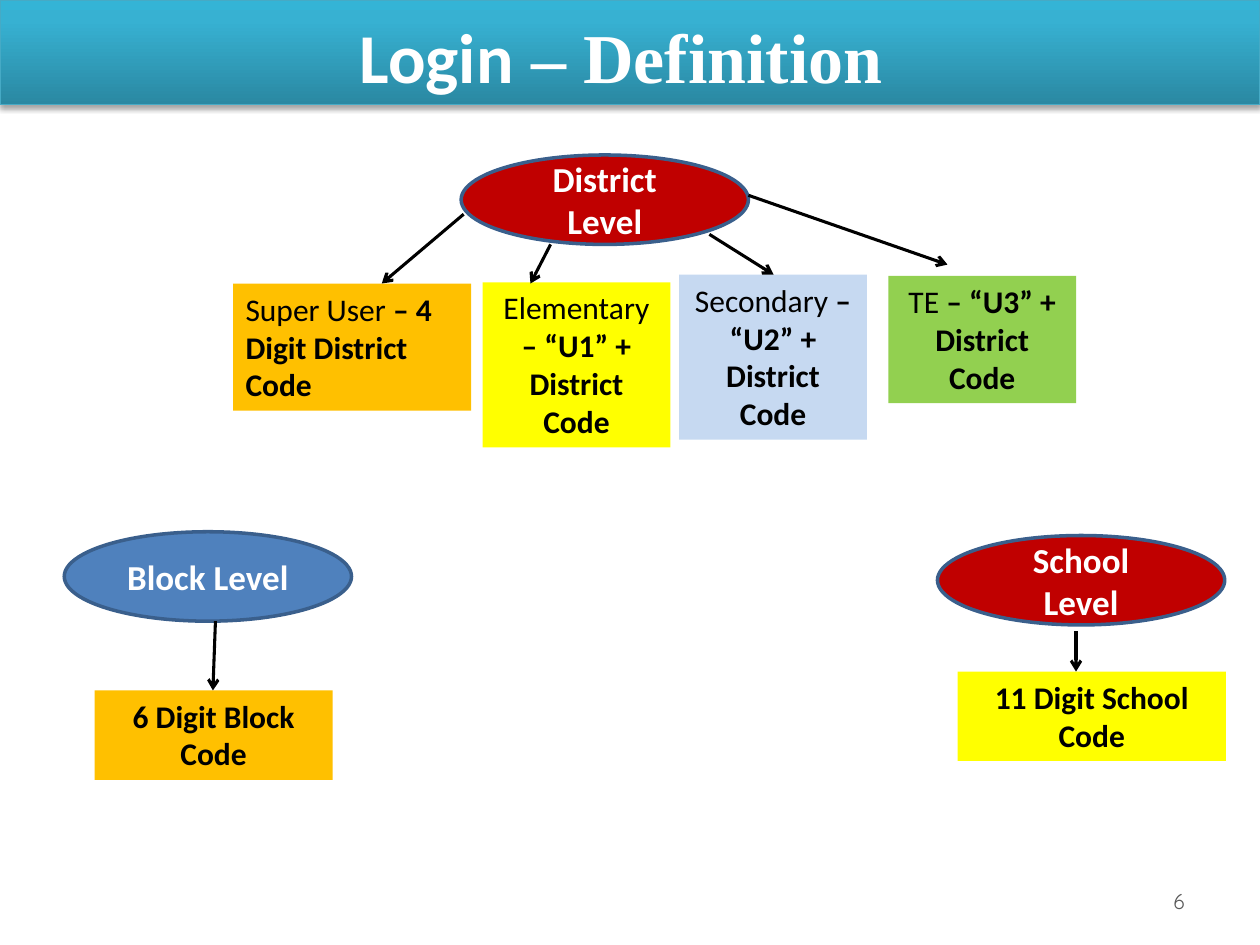
import lxml.etree
import pptx
import pptx.util
import pptx.dml.color
import pptx.enum.shapes
import pptx.enum.text
import pptx.oxml
import pptx.oxml.ns

RGB = pptx.dml.color.RGBColor
SHAPE = pptx.enum.shapes.MSO_SHAPE
ALIGN = pptx.enum.text.PP_ALIGN
ANCHOR = pptx.enum.text.MSO_ANCHOR
FIT = pptx.enum.text.MSO_AUTO_SIZE

WHITE = RGB(0xFF, 0xFF, 0xFF)
BLACK = RGB(0x00, 0x00, 0x00)
GREY = RGB(0x59, 0x59, 0x59)
RED = RGB(0xC0, 0x00, 0x00)
BLUE = RGB(0x4F, 0x81, 0xBD)
NAVY = RGB(0x3A, 0x5F, 0x8C)
ORANGE = RGB(0xFF, 0xC0, 0x00)
YELLOW = RGB(0xFF, 0xFF, 0x00)
PALE_BLUE = RGB(0xC6, 0xD9, 0xF1)
GREEN = RGB(0x92, 0xD0, 0x50)
TEAL_EDGE = RGB(0x46, 0xAA, 0xC5)
TEAL_STOPS = [(0, RGB(0x2A, 0x88, 0xA2)), (0.8, RGB(0x37, 0xB1, 0xD2)), (1, RGB(0x34, 0xB4, 0xD6))]


class LoginSlide:
    """Draws the login chart on a grid of 100 columns by 75 rows."""

    columns, rows = 100, 75
    level_size = (22.8, 7.1)
    heading = {"size": pptx.util.Pt(40), "bold": True, "name": "Calibri"}
    level_font = {"size": pptx.util.Pt(20), "bold": True, "name": "Calibri"}
    code_font = {"size": pptx.util.Pt(18), "name": "Calibri"}
    number_font = {"size": pptx.util.Pt(12), "name": "Quicksand"}

    def __init__(self, deck):
        self.slide = deck.slides.add_slide(deck.slide_layouts[6])
        self.column = deck.slide_width / self.columns
        self.row = deck.slide_height / self.rows

    def place(self, *lengths):
        return [round(length * (self.row if i % 2 else self.column)) for i, length in enumerate(lengths)]

    def letter(self, shape, runs, font, color, align=ALIGN.CENTER, **frame_format):
        frame = shape.text_frame
        for key, value in {"word_wrap": True, **frame_format}.items():
            setattr(frame, key, value)
        paragraph = frame.paragraphs[0]
        paragraph.alignment = align
        for words, extra in runs:
            run = paragraph.add_run()
            run.text = words
            run.font.color.rgb = color
            for key, value in {**font, **extra}.items():
                setattr(run.font, key, value)
        return paragraph

    def banner(self, runs, height):
        bar = self.slide.shapes.add_shape(SHAPE.RECTANGLE, *self.place(0, 0, self.columns, height))
        bar.fill.gradient()
        bar.fill.gradient_angle = 90
        stop_list = bar.element.spPr.find(".//" + pptx.oxml.ns.qn("a:gsLst"))
        lxml.etree.SubElement(stop_list, pptx.oxml.ns.qn("a:gs"), pos="0")
        for stop, (position, color) in zip(bar.fill.gradient_stops, TEAL_STOPS):
            stop.position = position
            stop.color.rgb = color
        bar.line.color.rgb = TEAL_EDGE
        bar.line.width = pptx.util.Pt(0.75)
        bar.shadow.inherit = False
        effects = bar.element.spPr.find(pptx.oxml.ns.qn("a:effectLst"))
        effects.append(pptx.oxml.parse_xml(
            f'<a:outerShdw {pptx.oxml.ns.nsdecls("a")} blurRad="{pptx.util.Pt(3.1)}" '
            f'dist="{pptx.util.Pt(1.8)}" dir="5400000" rotWithShape="0">'
            '<a:srgbClr val="000000"><a:alpha val="35000"/></a:srgbClr></a:outerShdw>'))
        title = self.letter(bar, runs, self.heading, WHITE, vertical_anchor=ANCHOR.BOTTOM)
        title.line_spacing = 0.9

    def level(self, name, left, top, color):
        oval = self.slide.shapes.add_shape(SHAPE.OVAL, *self.place(left, top, *self.level_size))
        oval.fill.solid()
        oval.fill.fore_color.rgb = color
        oval.line.color.rgb = NAVY
        oval.line.width = pptx.util.Pt(2)
        oval.shadow.inherit = False
        self.letter(oval, [(name, {})], self.level_font, WHITE, vertical_anchor=ANCHOR.MIDDLE)

    def code(self, role, rule, box, color, align=ALIGN.CENTER):
        card = self.slide.shapes.add_textbox(*self.place(*box))
        card.fill.solid()
        card.fill.fore_color.rgb = color
        runs = [(words, {"bold": bold}) for words, bold in ((role, False), (rule, True)) if words]
        self.letter(card, runs, self.code_font, BLACK, align, auto_size=FIT.SHAPE_TO_FIT_TEXT)

    def arrow(self, *ends):
        straight = pptx.enum.shapes.MSO_CONNECTOR.STRAIGHT
        link = self.slide.shapes.add_connector(straight, *self.place(*ends))
        link.line.color.rgb = BLACK
        link.line.width = pptx.util.Pt(1.75)
        outline = link.element.spPr.find(pptx.oxml.ns.qn("a:ln"))
        lxml.etree.SubElement(outline, pptx.oxml.ns.qn("a:tailEnd"), type="arrow")
        lxml.etree.SubElement(link.element.spPr, pptx.oxml.ns.qn("a:effectLst"))

    def number(self, value, box):
        label = self.slide.shapes.add_textbox(*self.place(*box))
        self.letter(label, [(value, {})], self.number_font, GREY, ALIGN.RIGHT,
                    vertical_anchor=ANCHOR.MIDDLE)


def main():
    deck = pptx.Presentation()
    deck.slide_width = pptx.util.Inches(10)
    deck.slide_height = pptx.util.Inches(7.5)
    chart = LoginSlide(deck)

    chart.number("6", (71.7, 69.5, 23.3, 4))
    chart.banner([("Login", {}), (" – Definition ", {"name": "Times New Roman"})], 8.3)

    for name, left, top, color in [
        ("District Level", 36.6, 12.3, RED),
        ("Block Level", 5.1, 42.2, BLUE),
        ("School Level", 74.4, 42.5, RED),
    ]:
        chart.level(name, left, top, color)

    chart.code("Super User ", "– 4 Digit District Code", (18.5, 22.5, 18.9, 10.1), ORANGE, ALIGN.LEFT)
    for role, unit, left, top, height, color in [
        ("Elementary ", "U1", 38.3, 22.4, 13.1, YELLOW),
        ("Secondary ", "U2", 53.9, 21.8, 13.1, PALE_BLUE),
        ("TE ", "U3", 70.5, 21.9, 10.1, GREEN),
    ]:
        chart.code(role, f"– “{unit}” + District Code", (left, top, 14.9, height), color)
    chart.code("", "6 Digit Block Code", (7.5, 54.8, 18.9, 7.1), ORANGE)
    chart.code("", "11 Digit School Code", (76, 53.3, 21.3, 7.1), YELLOW)

    for ends in [
        (36.8, 17, 30.3, 22.5),
        (43.7, 19.4, 42.1, 22.5),
        (56.3, 18.6, 61.4, 21.8),
        (59.4, 15.5, 75.2, 21),
        (17.1, 49.3, 16.9, 54.8),
        (85.4, 50.1, 85.4, 53.3),
    ]:
        chart.arrow(*ends)

    deck.save("out.pptx")


if __name__ == "__main__":
    main()
